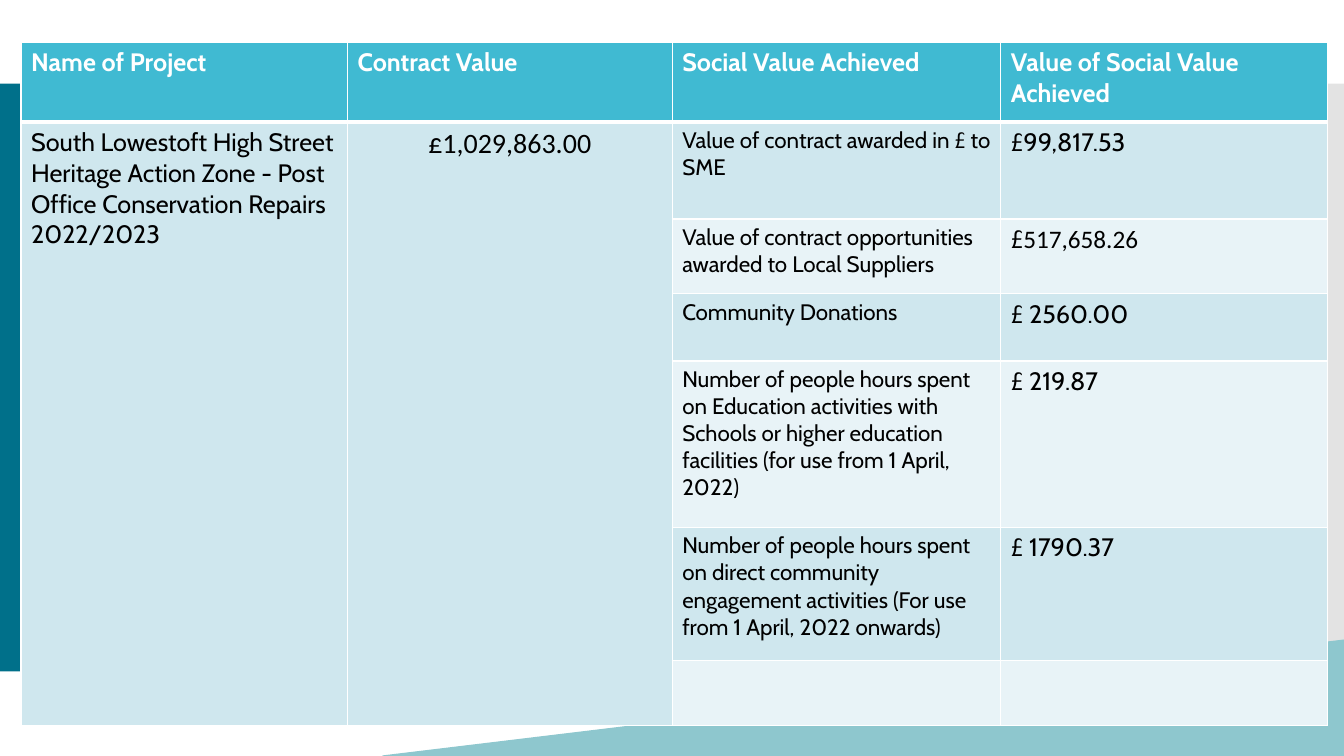
from lxml import etree
from pptx import Presentation
from pptx.dml.color import RGBColor
from pptx.enum.shapes import MSO_SHAPE
from pptx.enum.text import PP_ALIGN
from pptx.oxml.ns import qn
from pptx.util import Cm, Pt

RECT, WEDGE = MSO_SHAPE.RECTANGLE, MSO_SHAPE.RIGHT_TRIANGLE
TRIANGLE = MSO_SHAPE.ISOSCELES_TRIANGLE
CENTER = PP_ALIGN.CENTER
HEX = {"teal": "00708A", "grey": "C8C8C8", "aqua": "8EC7CE", "head": "40BAD2",
       "dark": "CFE7EE", "light": "E8F3F7", "white": "FFFFFF", "black": "000000"}

deck = Presentation()
deck.slide_width, deck.slide_height = Cm(33.87), Cm(19.05)
slide = deck.slides.add_slide(deck.slide_layouts[6])


def write(cell, runs, color, bold=False):
    """Fill a cell with (text, size, font) runs in one paragraph."""
    for text, size, face in runs:
        run = cell.text_frame.paragraphs[0].add_run()
        run.text = text
        style = {"size": Pt(size), "name": face, "bold": bold}
        for key, value in style.items():
            setattr(run.font, key, value)
        run.font.color.rgb = RGBColor.from_string(HEX[color])


def edge(cell, widths):
    """Draw white borders; widths maps each side to points."""
    props = cell._tc.get_or_add_tcPr()
    for spot, (side, width) in enumerate(widths.items()):
        line = etree.Element(qn(f"a:ln{side}"), w=str(Pt(width)))
        fill = etree.SubElement(line, qn("a:solidFill"))
        etree.SubElement(fill, qn("a:srgbClr"), val=HEX["white"])
        props.insert(spot, line)


# Backdrop
backdrop = [
    (RECT, "teal", 0, 2.11, 9.58, 14.81),
    (RECT, "grey", 32.81, 2.11, 1.06, 14.81),
    (TRIANGLE, "aqua", 9.65, 16.13, 24.22, 2.92),
]
for kind, color, left, top, width, height in backdrop:
    shape = slide.shapes.add_shape(kind, Cm(left), Cm(top), Cm(width), Cm(height))
    shape.shadow.inherit = False
    shape.fill.solid()
    shape.fill.fore_color.rgb = RGBColor.from_string(HEX[color])
    shape.line.fill.background()
    if kind == TRIANGLE:
        shape.adjustments[0] = 1
        shape.line.color.rgb = RGBColor.from_string(HEX[color])
        shape.line.width = Pt(0.85)
    if color == "grey":
        tint = shape._element.spPr.find(f"{qn('a:solidFill')}/{qn('a:srgbClr')}")
        etree.SubElement(tint, qn("a:alpha"), val="50000")

# Table grid
cols = [8.23, 8.18, 8.28, 8.23]
rows = [2.01, 2.44, 1.88, 1.7, 4.19, 3.35, 1.65]
table = slide.shapes.add_table(len(rows), len(cols), Cm(0.53), Cm(1.07),
                               Cm(sum(cols)), Cm(sum(rows))).table
for col, width in zip(table.columns, cols):
    col.width = Cm(width)
for row, height in zip(table.rows, rows):
    row.height = Cm(height)

for r in range(len(rows)):
    for c in range(len(cols)):
        cell = table.cell(r, c)
        color = "head" if r == 0 else "dark" if r % 2 or c < 2 else "light"
        cell.fill.solid()
        cell.fill.fore_color.rgb = RGBColor.from_string(HEX[color])
        edge(cell, {"L": 1, "R": 1, "T": 3 if r == 1 else 1, "B": 3 if r == 0 else 1})

# Table text
heads = ["Name of Project", "Contract Value", "Social Value Achieved",
         "Value of Social Value Achieved"]
for c, head in enumerate(heads):
    write(table.cell(0, c), [(head, 18, "Cabin")], "white", True)

project = [
    ("South Lowestoft High Street Heritage Action Zone - "
     "Post Office Conservation Repairs 2022/2023", 18, "Cabin"),
    ("£1,029,863.00", 20, "Calibri"),
]
for c, run in enumerate(project):
    table.cell(1, c).merge(table.cell(len(rows) - 1, c))
    write(table.cell(1, c), [run], "black")
table.cell(1, 1).text_frame.paragraphs[0].alignment = CENTER

results = [
    ("Value of contract awarded in £ to SME", [("£99,817.53", 18, "Cabin")]),
    ("Value of contract opportunities awarded to Local Suppliers",
     [("£", 18, "Cabin"), ("517,658.26", 18, "Calibri")]),
    ("Community Donations", [("£ 2560.00", 18, "Cabin")]),
    ("Number of people hours spent on Education activities with Schools or "
     "higher education facilities (for use from 1 April, 2022)",
     [("£ 219.87", 18, "Cabin")]),
    ("Number of people hours spent on direct community engagement activities "
     "(For use from 1 April, 2022 onwards)", [("£ 1790.37", 18, "Cabin")]),
]
for r, (label, amount) in enumerate(results, 1):
    write(table.cell(r, 2), [(label, 16, "Cabin")], "black")
    write(table.cell(r, 3), amount, "black")

deck.save("out.pptx")
